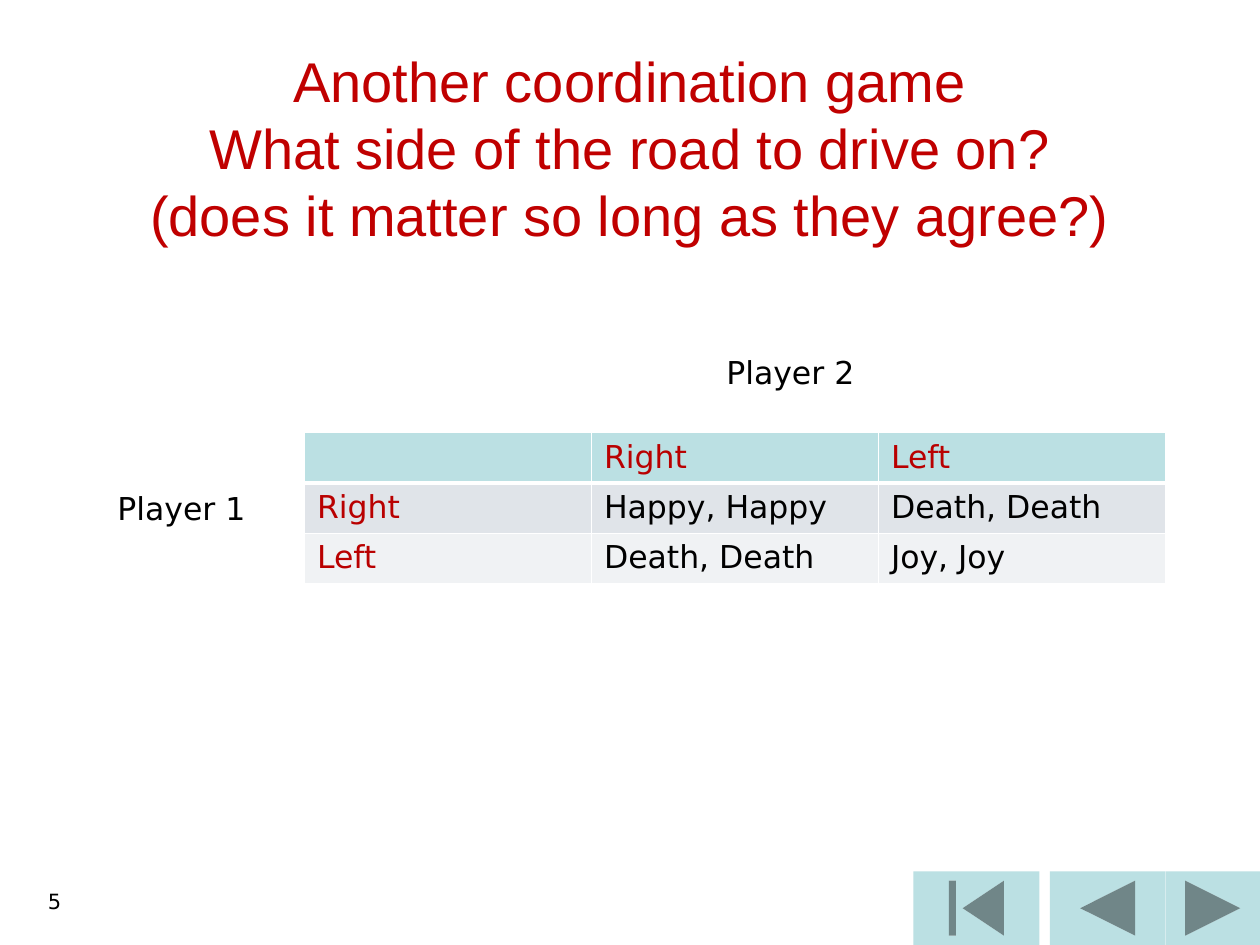
from dataclasses import dataclass

from lxml.etree import SubElement
from pptx import Presentation
from pptx.dml.color import RGBColor as Color
from pptx.enum.shapes import MSO_SHAPE as Preset
from pptx.enum.text import MSO_ANCHOR as Anchor, PP_ALIGN as Align
from pptx.oxml.ns import qn
from pptx.slide import Slide
from pptx.table import _Cell as Cell
from pptx.text.text import _Paragraph as Paragraph
from pptx.util import Emu, Pt

EMU_PER_PX = 7620


@dataclass(frozen=True)
class Theme:
    title_font: str = "Arial"
    body_font: str = "DejaVu Sans"
    title_size: int = 32
    title_leading: float = 38.3
    body_size: int = 18
    number_size: int = 12
    title: str = "C00000"
    strategy: str = "B90000"
    text: str = "000000"
    accent: str = "BBE0E3"
    rule: str = "FFFFFF"
    rows: tuple[str, ...] = ("BBE0E3", "E0E4E9", "F0F2F4")


THEME = Theme()


@dataclass(frozen=True)
class Area:
    left: int
    top: int
    width: int
    height: int

    def emu(self) -> tuple[Emu, ...]:
        return tuple(px(v) for v in (self.left, self.top, self.width, self.height))


@dataclass(frozen=True)
class Label:
    text: str
    area: Area
    size: int = THEME.body_size
    font: str = THEME.body_font
    color: str = THEME.text
    align: Align = Align.LEFT
    anchor: Anchor = Anchor.TOP
    leading: float | None = None
    bottom_inset: int = 6


@dataclass(frozen=True)
class Button:
    preset: Preset
    left: int
    width: int


TITLE = Label(
    "Another coordination game\nWhat side of the road to drive on?\n"
    "(does it matter so long as they agree?)",
    Area(10, 90, 1180, 160), THEME.title_size, THEME.title_font, THEME.title,
    Align.CENTER, Anchor.MIDDLE, THEME.title_leading, 66,
)
LABELS = (
    Label("5", Area(-180, 840, 250, 60), THEME.number_size, align=Align.RIGHT),
    Label("Player 1", Area(100, 460, 148, 48)),
    Label("Player 2", Area(680, 330, 148, 48)),
)
BUTTONS = (
    Button(Preset.ACTION_BUTTON_BACK_OR_PREVIOUS, 1000, 110),
    Button(Preset.ACTION_BUTTON_BEGINNING, 870, 120),
    Button(Preset.ACTION_BUTTON_FORWARD_OR_NEXT, 1110, 90),
)
PAYOFFS = (
    ("", "Right", "Left"),
    ("Right", "Happy, Happy", "Death, Death"),
    ("Left", "Death, Death", "Joy, Joy"),
)
PAYOFF_AREA = Area(290, 412, 820, 144)


def px(value: int) -> Emu:
    return Emu(value * EMU_PER_PX)


def style_runs(para: Paragraph, font: str, size: int, color: str) -> None:
    for span in para.runs:
        span.font.name = font
        span.font.size = Pt(size)
        span.font.bold = False
        span.font.color.rgb = Color.from_string(color)


def draw_label(page: Slide, label: Label) -> None:
    box = page.shapes.add_textbox(*label.area.emu())
    frame = box.text_frame
    frame.word_wrap = True
    frame.vertical_anchor = label.anchor
    frame.margin_top = px(6)
    frame.margin_bottom = px(label.bottom_inset)
    para = frame.paragraphs[0]
    para.text = label.text
    para.alignment = label.align
    if label.leading:
        para.line_spacing = Pt(label.leading)
    style_runs(para, label.font, label.size, label.color)


def draw_button(page: Slide, button: Button) -> None:
    area = Area(button.left, 830, button.width, 70)
    shape = page.shapes.add_shape(button.preset, *area.emu())
    shape.shadow.inherit = False
    shape.fill.solid()
    shape.fill.fore_color.rgb = Color.from_string(THEME.accent)
    shape.line.fill.background()


def add_borders(cell: Cell, top: int, bottom: int) -> None:
    properties = cell._tc.get_or_add_tcPr()
    for side, points in (("L", 1), ("R", 1), ("T", top), ("B", bottom)):
        line = SubElement(properties, qn(f"a:ln{side}"), w=str(Pt(points)))
        fill = SubElement(line, qn("a:solidFill"))
        SubElement(fill, qn("a:srgbClr"), val=THEME.rule)


def draw_payoffs(page: Slide) -> None:
    size = len(PAYOFFS)
    table = page.shapes.add_table(size, size, *PAYOFF_AREA.emu()).table
    table.first_row = False
    table.horz_banding = False
    for row, texts in enumerate(PAYOFFS):
        for column, text in enumerate(texts):
            cell = table.cell(row, column)
            add_borders(cell, 3 if row == 1 else 1, 3 if row == 0 else 1)
            cell.fill.solid()
            cell.fill.fore_color.rgb = Color.from_string(THEME.rows[row])
            if text:
                cell.text_frame.text = text
                color = THEME.text if row and column else THEME.strategy
                style_runs(cell.text_frame.paragraphs[0], THEME.body_font,
                           THEME.body_size, color)


def main() -> None:
    deck = Presentation()
    deck.slide_width, deck.slide_height = px(1200), px(900)
    page = deck.slides.add_slide(deck.slide_layouts[6])
    for button in BUTTONS:
        draw_button(page, button)
    draw_label(page, TITLE)
    draw_payoffs(page)
    for label in LABELS:
        draw_label(page, label)
    deck.save("out.pptx")


if __name__ == "__main__":
    main()
